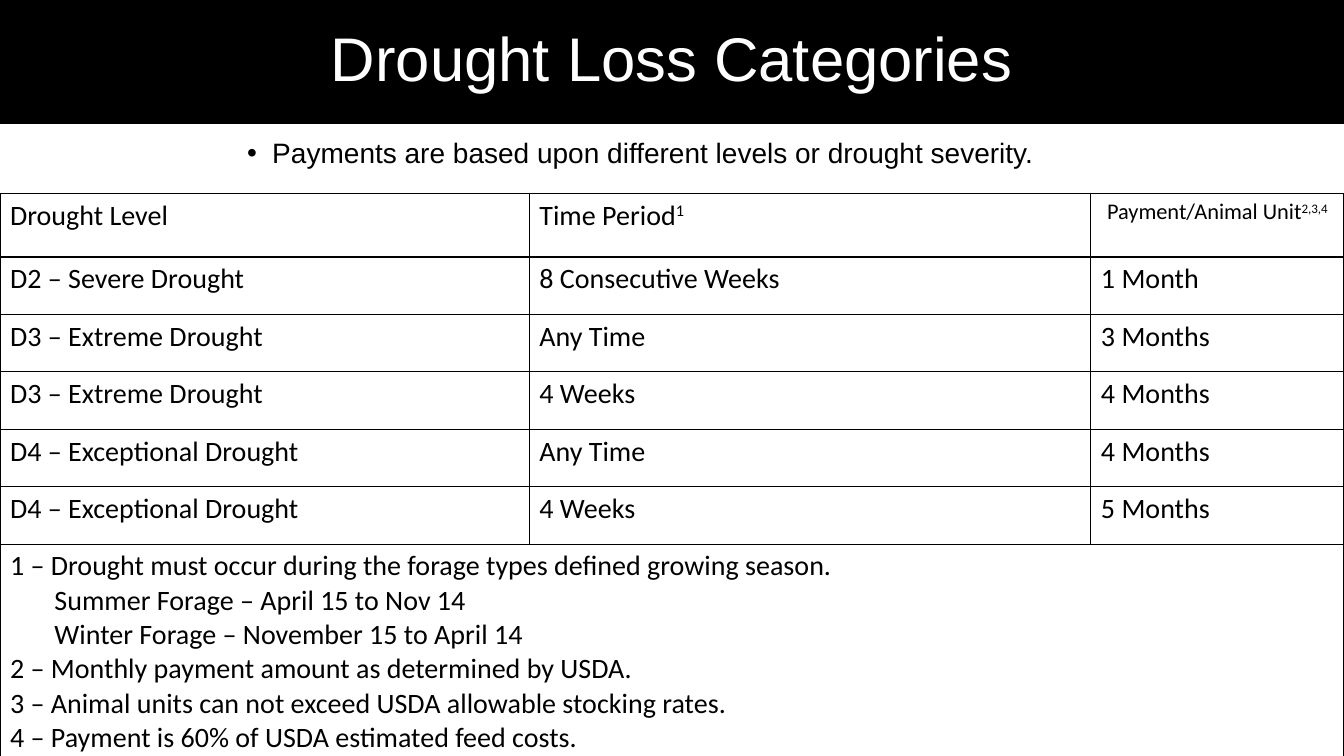
from dataclasses import dataclass

from lxml import etree
from pptx import Presentation
from pptx.dml.color import RGBColor
from pptx.enum.text import MSO_ANCHOR, MSO_AUTO_SIZE, PP_ALIGN
from pptx.oxml.ns import qn
from pptx.util import Inches, Pt

LEFT, CENTER = PP_ALIGN.LEFT, PP_ALIGN.CENTER
TOP, MIDDLE = MSO_ANCHOR.TOP, MSO_ANCHOR.MIDDLE
NO_AUTOFIT = MSO_AUTO_SIZE.NONE
TITLE_AND_CONTENT = 1

SLIDE_WIDTH, SLIDE_HEIGHT = 13.33, 7.5
BAND_HEIGHT = 1.23
TABLE_TOP = 1.92
COLUMN_WIDTHS = [5.25, 5.57, 2.51]
ROW_HEIGHTS = [0.63] + [0.57] * 5 + [2.11]

HEADINGS = ["Drought Level", "Time Period^1", "Payment/Animal Unit^2,3,4"]
LOSS_CATEGORIES = [
    ["D2 – Severe Drought", "8 Consecutive Weeks", "1 Month"],
    ["D3 – Extreme Drought", "Any Time", "3 Months"],
    ["D3 – Extreme Drought", "4 Weeks", "4 Months"],
    ["D4 – Exceptional Drought", "Any Time", "4 Months"],
    ["D4 – Exceptional Drought", "4 Weeks", "5 Months"],
]
FOOTNOTES = [
    "1 – Drought must occur during the forage types defined growing season.",
    "\tSummer Forage – April 15 to Nov 14",
    "\tWinter Forage – November 15 to April 14",
    "2 – Monthly payment amount as determined by USDA.",
    "3 – Animal units can not exceed USDA allowable stocking rates.",
    "4 – Payment is 60% of USDA estimated feed costs.",
]


@dataclass(frozen=True)
class Theme:
    ink: str = "000000"
    paper: str = "FFFFFF"
    heading_font: str = "Arial"
    table_font: str = "Calibri"
    title_size: int = 44
    text_size: int = 20
    small_size: int = 16
    rule_width: int = 1
    bullet_indent: float = 0.25
    note_tab: float = 0.44


def write(frame, text, *, font, size, color, align=LEFT, line_spacing=1.0,
          bullet_indent=None, tab=None):
    for index, line in enumerate(text.split("\n")):
        paragraph = frame.paragraphs[0] if index == 0 else frame.add_paragraph()
        properties = paragraph._p.get_or_add_pPr()
        if bullet_indent:
            indent = Inches(bullet_indent)
            properties.set("marL", str(indent))
            properties.set("indent", str(-indent))
            etree.SubElement(properties, qn("a:buFont"), typeface="Arial")
            etree.SubElement(properties, qn("a:buChar"), char="•")
        if tab and line.startswith("\t"):
            stops = etree.SubElement(properties, qn("a:tabLst"))
            etree.SubElement(stops, qn("a:tab"), pos=str(Inches(tab)), algn="l")
        paragraph.alignment = align
        paragraph.line_spacing = line_spacing
        paragraph.space_before = Pt(0)
        for position, part in enumerate(line.split("^")):
            run = paragraph.add_run()
            run.text = part
            run.font.name = font
            run.font.size = Pt(size)
            run.font.color.rgb = RGBColor.from_string(color)
            if position:
                run._r.get_or_add_rPr().set("baseline", "30000")


class SlideBuilder:
    def __init__(self, presentation, theme):
        self.theme = theme
        layout = presentation.slide_layouts[TITLE_AND_CONTENT]
        self.slide = presentation.slides.add_slide(layout)

    def place(self, placeholder, left, top, width, height, anchor):
        placeholder.left, placeholder.top = Inches(left), Inches(top)
        placeholder.width, placeholder.height = Inches(width), Inches(height)
        frame = placeholder.text_frame
        frame.word_wrap = True
        frame.auto_size = NO_AUTOFIT
        frame.vertical_anchor = anchor
        return frame

    def title(self, text):
        heading = self.slide.shapes.title
        frame = self.place(heading, 0, 0, SLIDE_WIDTH, BAND_HEIGHT, MIDDLE)
        heading.fill.solid()
        heading.fill.fore_color.rgb = RGBColor.from_string(self.theme.ink)
        write(frame, text, font=self.theme.heading_font, size=self.theme.title_size,
              color=self.theme.paper, align=CENTER, line_spacing=0.9)

    def bullets(self, text):
        frame = self.place(self.slide.placeholders[1], 2.35, 1.33, 8.62, 0.75, TOP)
        write(frame, text, font=self.theme.heading_font, size=self.theme.text_size,
              color=self.theme.ink, line_spacing=0.9,
              bullet_indent=self.theme.bullet_indent)

    def style_cell(self, cell):
        properties = cell._tc.get_or_add_tcPr()
        for side in ("a:lnL", "a:lnR", "a:lnT", "a:lnB"):
            rule = etree.SubElement(properties, qn(side), w=str(Pt(self.theme.rule_width)))
            fill = etree.SubElement(rule, qn("a:solidFill"))
            etree.SubElement(fill, qn("a:srgbClr"), val=self.theme.ink)
        cell.fill.solid()
        cell.fill.fore_color.rgb = RGBColor.from_string(self.theme.paper)

    def write_cell(self, cell, text, **changes):
        style = dict(font=self.theme.table_font, size=self.theme.text_size,
                     color=self.theme.ink)
        write(cell.text_frame, text, **(style | changes))

    def table(self, headings, categories, footnotes):
        table = self.slide.shapes.add_table(
            len(ROW_HEIGHTS), len(COLUMN_WIDTHS), Inches(0), Inches(TABLE_TOP),
            Inches(SLIDE_WIDTH), Inches(sum(ROW_HEIGHTS))).table
        table.first_row = table.horz_banding = False
        for column, width in zip(table.columns, COLUMN_WIDTHS):
            column.width = Inches(width)
        for row, height in zip(table.rows, ROW_HEIGHTS):
            row.height = Inches(height)
        for cell in table.iter_cells():
            self.style_cell(cell)

        payment_column = len(headings) - 1
        for row, entries in enumerate([headings] + categories):
            for column, entry in enumerate(entries):
                changes = {}
                if row == 0 and column == payment_column:
                    changes = dict(size=self.theme.small_size, align=CENTER)
                self.write_cell(table.cell(row, column), entry, **changes)

        last_row = len(ROW_HEIGHTS) - 1
        notes = table.cell(last_row, 0)
        notes.merge(table.cell(last_row, payment_column))
        self.write_cell(notes, "\n".join(footnotes), tab=self.theme.note_tab)


def main():
    presentation = Presentation()
    presentation.slide_width = Inches(SLIDE_WIDTH)
    presentation.slide_height = Inches(SLIDE_HEIGHT)
    builder = SlideBuilder(presentation, Theme())
    builder.title("Drought Loss Categories")
    builder.bullets("Payments are based upon different levels or drought severity.")
    builder.table(HEADINGS, LOSS_CATEGORIES, FOOTNOTES)
    presentation.save("out.pptx")


if __name__ == "__main__":
    main()
